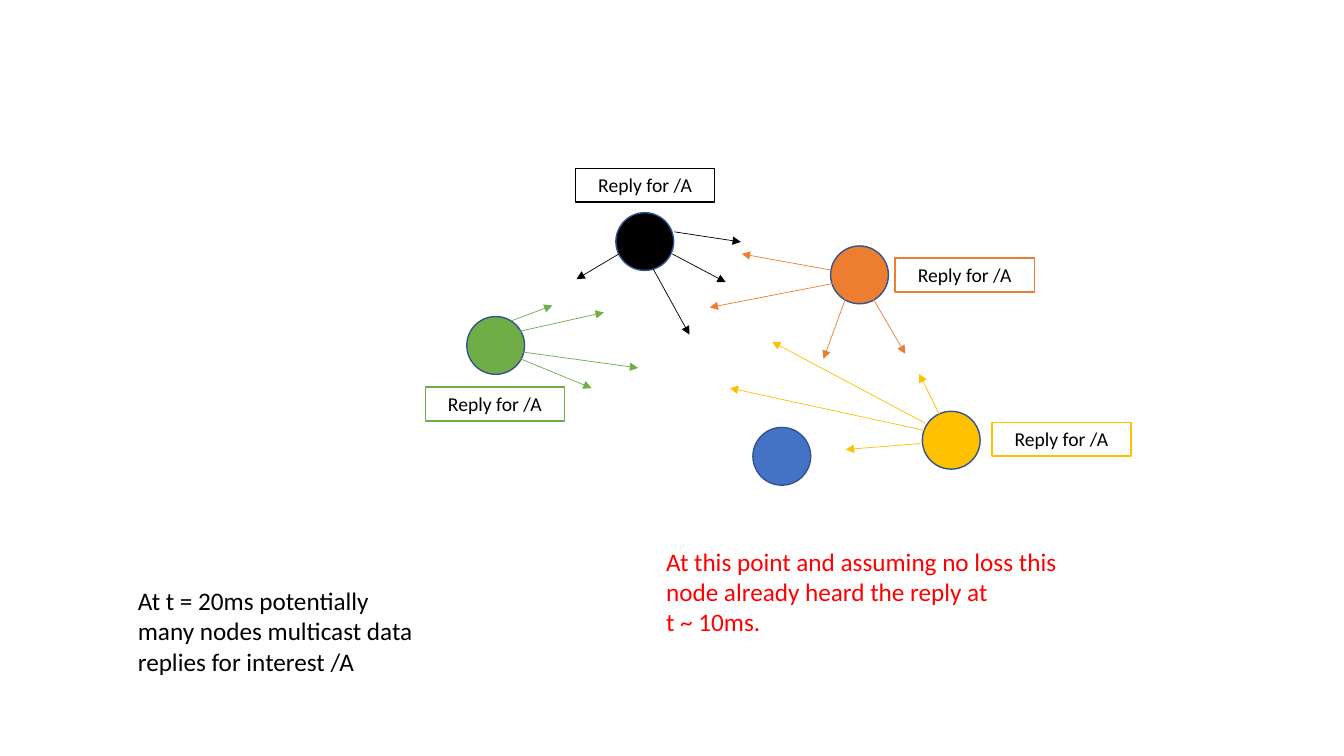
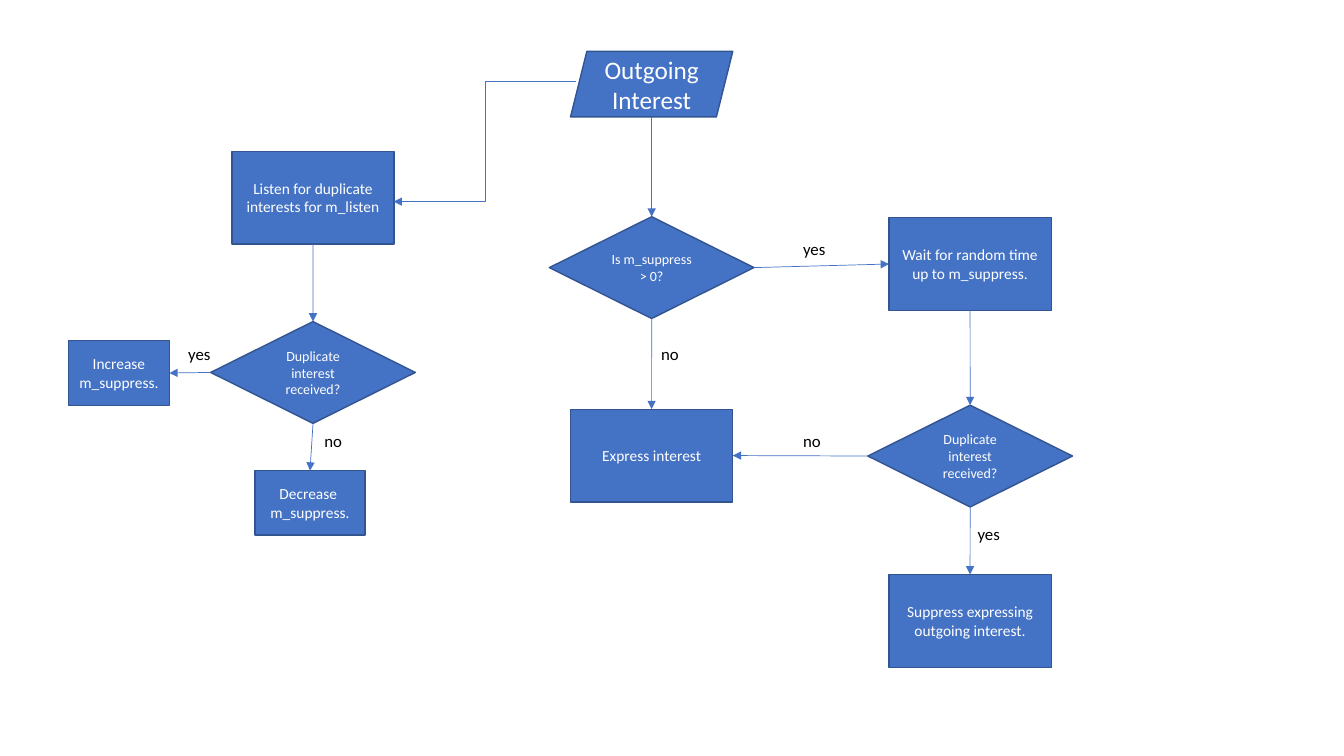
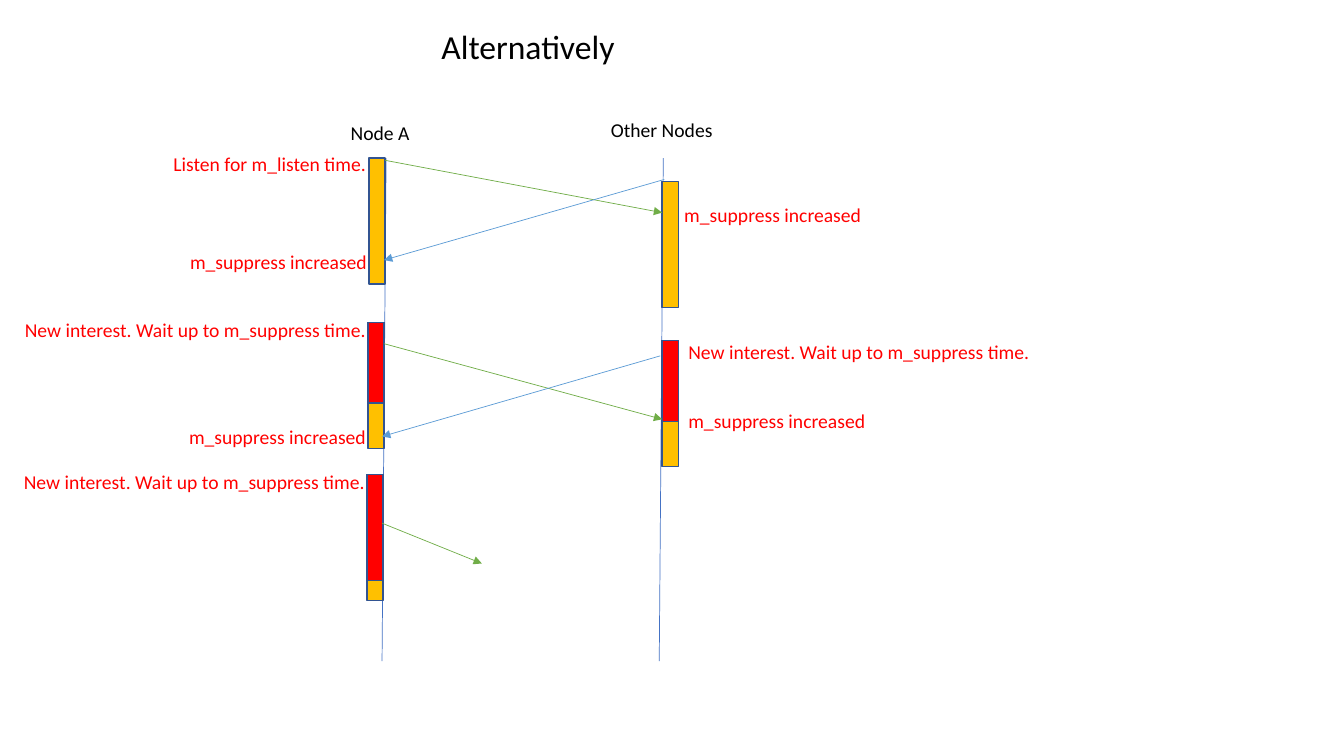
from dataclasses import dataclass

from lxml import etree
from pptx import Presentation
from pptx import util as u
from pptx.dml import color as c
from pptx.enum import shapes, text
from pptx.oxml import ns

FONT = "Calibri"
BLACK, WHITE, RED = "000000", "FFFFFF", "FF0000"
BLUE, SKY, GREEN = "4472C4", "5B9BD5", "70AD47"
ORANGE, GOLD, OUTLINE = "ED7D31", "FFC000", "325491"
Kind = shapes.MSO_SHAPE
Line = shapes.MSO_CONNECTOR
Align = text.PP_ALIGN
TOP, LEFT, BOTTOM, RIGHT = range(4)


@dataclass(frozen=True)
class Box:
    left: float
    top: float
    width: float
    height: float

    def lengths(self):
        return [u.Pt(v) for v in (self.left, self.top, self.width, self.height)]


@dataclass(frozen=True)
class Style:
    size: float
    color: str = BLACK
    align: Align = Align.LEFT


@dataclass(frozen=True)
class Sender:
    color: str
    left: float
    top: float
    label: tuple | None = None
    arrows: tuple = ()


@dataclass(frozen=True)
class Node:
    name: str
    kind: Kind
    caption: str
    size: float
    box: Box


@dataclass(frozen=True)
class Link:
    start: str
    start_side: int
    end: str
    end_side: int


@dataclass(frozen=True)
class Bar:
    left: float
    top: float
    wait: float = 0


@dataclass(frozen=True)
class Note:
    caption: str
    left: float
    top: float
    align: Align = Align.LEFT


def rgb(value: str) -> c.RGBColor:
    return c.RGBColor.from_string(value)


def write(frame, caption: str, style: Style) -> None:
    frame.word_wrap = True
    frame.text = caption
    for paragraph in frame.paragraphs:
        paragraph.alignment = style.align
        paragraph.font.name = FONT
        paragraph.font.size = u.Pt(style.size)
        paragraph.font.color.rgb = rgb(style.color)


def add_shape(slide, kind: Kind, box: Box, fill: str):
    shape = slide.shapes.add_shape(kind, *box.lengths())
    shape.shadow.inherit = False
    shape.fill.solid()
    shape.fill.fore_color.rgb = rgb(fill)
    shape.line.color.rgb = rgb(OUTLINE)
    shape.line.width = u.Pt(1)
    return shape


def add_text(slide, caption: str, box: Box, style: Style, outline: str = ""):
    shape = slide.shapes.add_textbox(*box.lengths())
    write(shape.text_frame, caption, style)
    shape.text_frame.auto_size = text.MSO_AUTO_SIZE.SHAPE_TO_FIT_TEXT
    if outline:
        shape.fill.solid()
        shape.fill.fore_color.rgb = rgb(WHITE)
        shape.line.color.rgb = rgb(outline)
        shape.line.width = u.Pt(1)
    return shape


def add_line(slide, points: tuple, color: str, arrow: bool = True, kind: Line = Line.STRAIGHT):
    connector = slide.shapes.add_connector(kind, *[u.Pt(v) for v in points])
    connector.line.color.rgb = rgb(color)
    connector.line.width = u.Pt(0.5)
    properties = connector._element.spPr
    if arrow:
        outline = properties.find(ns.qn("a:ln"))
        etree.SubElement(outline, ns.qn("a:tailEnd"), type="triangle")
    etree.SubElement(properties, ns.qn("a:effectLst"))
    return connector


SENDERS = (
    Sender(GREEN, 333.4, 226.1, (303.8, 276.5), (
        (365.8, 229, 394.6, 218.2), (370.1, 236.9, 431.3, 223.2),
        (372.2, 251.3, 455.8, 262.8), (370.1, 255.6, 422.6, 277.2))),
    Sender(GOLD, 658.8, 293.8, (708.5, 301.7), (
        (671, 295.9, 656.6, 267.1), (657.4, 316.8, 604.1, 321.1),
        (661, 302.4, 551.5, 244.1), (660.2, 307.4, 521.3, 277.2))),
    Sender(BLACK, 439.9, 151.9, (411.1, 120.2), (
        (442.1, 181.4, 411.8, 199.4), (466.6, 192.2, 492.5, 239),
        (481.7, 165.6, 529.2, 172.8), (480.2, 181.4, 518.4, 201.6))),
    Sender(ORANGE, 593.3, 175.7, (639.4, 184.3), (
        (596.2, 202.3, 506.9, 219.6), (604.1, 213.1, 588.2, 256.3),
        (594, 193, 529.9, 181.4), (623.5, 213.1, 646.6, 252.7))),
    Sender(BLUE, 537.8, 305.3),
)


def build_replies(slide) -> None:
    for sender in SENDERS:
        add_shape(slide, Kind.OVAL, Box(sender.left, sender.top, 41.3, 41.3), sender.color)
        if sender.label:
            add_text(slide, "Reply for /A", Box(*sender.label, 99.4, 24.2),
                     Style(14, align=Align.CENTER), sender.color)
        for points in sender.arrows:
            add_line(slide, points, sender.color)
    add_text(slide, "At t = 20ms potentially many nodes multicast data replies for interest /A",
             Box(91.4, 414.7, 216, 72.7), Style(18))
    add_text(slide, "At this point and assuming no loss this node already heard the reply at\nt ~ 10ms.",
             Box(468.7, 386.6, 312.5, 72.7), Style(18, RED))


def process(name: str, caption: str, left: float, top: float,
            width: float = 115.9, height: float = 66.2) -> Node:
    return Node(name, Kind.FLOWCHART_PROCESS, caption, 11, Box(left, top, width, height))


def decision(name: str, caption: str, left: float, top: float) -> Node:
    return Node(name, Kind.FLOWCHART_DECISION, caption, 10, Box(left, top, 146.2, 72.7))


NODES = (
    Node("outgoing", Kind.PARALLELOGRAM, "Outgoing Interest", 18, Box(407.5, 36.7, 115.9, 46.8)),
    decision("check", "Is m_suppress > 0?", 392.4, 154.8),
    process("listen", "Listen for duplicate interests for m_listen", 165.6, 108),
    decision("heard", "Duplicate interest received?", 150.5, 229.7),
    process("increase", "Increase m_suppress.", 49, 243.4, 72, 46.1),
    process("decrease", "Decrease  m_suppress.", 182.2, 336.2, 78.5, 46.1),
    process("wait", "Wait for random time up to m_suppress.", 635, 155.5),
    process("express", "Express interest", 407.5, 292.3),
    decision("duplicate", "Duplicate interest received?", 619.9, 289.4),
    process("suppress", "Suppress expressing outgoing interest.", 635, 410.4),
)
LINKS = (
    Link("listen", BOTTOM, "heard", TOP),
    Link("heard", LEFT, "increase", RIGHT),
    Link("heard", BOTTOM, "decrease", TOP),
    Link("check", BOTTOM, "express", TOP),
    Link("check", RIGHT, "wait", LEFT),
    Link("wait", BOTTOM, "duplicate", TOP),
    Link("duplicate", LEFT, "express", RIGHT),
    Link("duplicate", BOTTOM, "suppress", TOP),
)
ANSWERS = (
    ("yes", 566.6, 167), ("no", 465.1, 241.9), ("yes", 691.2, 370.8),
    ("no", 566.6, 303.8), ("no", 224.6, 303.8), ("yes", 127.4, 241.9),
)


def build_flowchart(slide) -> None:
    drawn = {}
    for node in NODES:
        shape = add_shape(slide, node.kind, node.box, BLUE)
        write(shape.text_frame, node.caption, Style(node.size, WHITE, Align.CENTER))
        shape.text_frame.vertical_anchor = text.MSO_ANCHOR.MIDDLE
        drawn[node.name] = shape
    for link in LINKS:
        connector = add_line(slide, (0, 0, 0, 0), BLUE)
        connector.begin_connect(drawn[link.start], link.start_side)
        connector.end_connect(drawn[link.end], link.end_side)
    entry = add_line(slide, (465.5, 83.5, 465.5, 154.8), BLUE)
    entry.end_connect(drawn["check"], TOP)
    add_line(slide, (411.8, 58.3, 281.2, 144), BLUE, kind=Line.ELBOW)
    for caption, left, top in ANSWERS:
        add_text(slide, caption, Box(left, top, 47.5, 21.6), Style(12))


LIFELINES = ((275.8, 113, 272.9, 472.3), (473.8, 113, 470.9, 472.3))
BARS = (
    Bar(263.5, 113), Bar(262.8, 230.4, 57.6), Bar(262.1, 339.1, 75.6),
    Bar(473, 129.6), Bar(473, 243.4, 57.6),
)
MESSAGES = (
    (GREEN, (275, 114.5, 473, 151.9)),
    (GREEN, (274.3, 245.5, 473, 299.5)),
    (GREEN, (272.9, 373.7, 344.2, 402.5)),
    (SKY, (474.5, 128.2, 274.3, 185.8)),
    (SKY, (471.6, 254.2, 272.9, 311.8)),
)
INCREASED = "m_suppress increased"
NEW_INTEREST = "New interest. Wait up to m_suppress time."
NOTES = (
    Note("Listen for m_listen time.", 6.5, 105.1, Align.RIGHT),
    Note(INCREASED, 7.2, 175, Align.RIGHT),
    Note(NEW_INTEREST, 6.5, 223.2, Align.RIGHT),
    Note(INCREASED, 6.5, 300.2, Align.RIGHT),
    Note(NEW_INTEREST, 5.8, 331.9, Align.RIGHT),
    Note(INCREASED, 481.7, 141.1),
    Note(NEW_INTEREST, 484.6, 239),
    Note(INCREASED, 484.6, 288.7),
)


def build_sequence(slide) -> None:
    add_text(slide, "Alternatively", Box(308.2, 15.1, 354.2, 36), Style(24))
    header = Style(14, align=Align.CENTER)
    add_text(slide, "Node A", Box(239.8, 82.8, 63.4, 24.2), header)
    add_text(slide, "Other Nodes", Box(403.2, 80.6, 139, 24.2), header)
    for points in LIFELINES:
        add_line(slide, points, BLUE, arrow=False)
    for bar in BARS:
        add_shape(slide, Kind.RECTANGLE, Box(bar.left, bar.top, 11.5, 90), GOLD)
        if bar.wait:
            add_shape(slide, Kind.RECTANGLE, Box(bar.left, bar.top, 11.5, bar.wait), RED)
    for color, points in MESSAGES:
        add_line(slide, points, color)
    for note in NOTES:
        add_text(slide, note.caption, Box(note.left, note.top, 262.1, 24.2),
                 Style(14, RED, note.align))


def main() -> None:
    presentation = Presentation()
    presentation.slide_width = u.Pt(960)
    presentation.slide_height = u.Pt(540)
    for build in (build_replies, build_flowchart, build_sequence):
        build(presentation.slides.add_slide(presentation.slide_layouts[6]))
    presentation.save("out.pptx")


if __name__ == "__main__":
    main()
